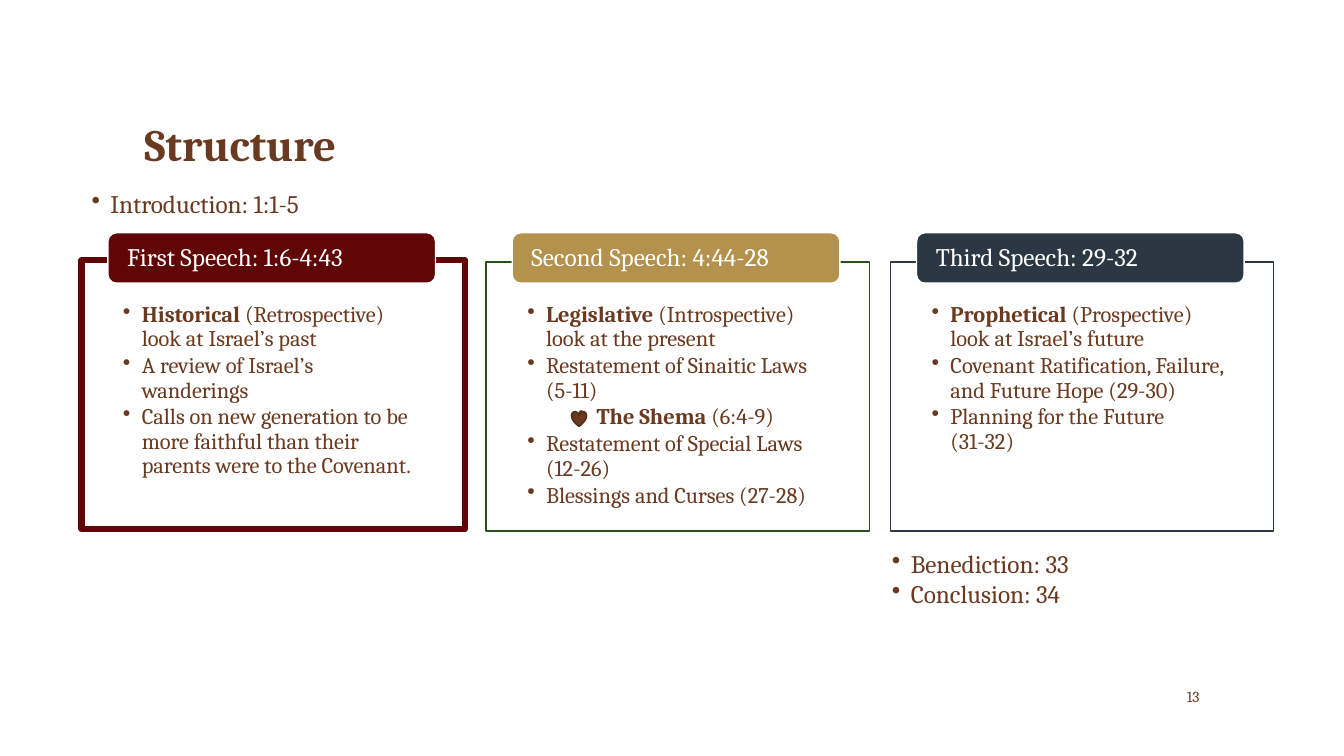
from lxml import etree
from pptx import Presentation
from pptx.dml.color import RGBColor
from pptx.enum.shapes import MSO_SHAPE
from pptx.enum.text import MSO_ANCHOR, MSO_AUTO_SIZE, PP_ALIGN
from pptx.oxml.ns import qn
from pptx.util import Pt

RECTANGLE, ROUNDED, HEART = MSO_SHAPE.RECTANGLE, MSO_SHAPE.ROUNDED_RECTANGLE, MSO_SHAPE.HEART
TOP, MIDDLE, BOTTOM = MSO_ANCHOR.TOP, MSO_ANCHOR.MIDDLE, MSO_ANCHOR.BOTTOM
LEFT, RIGHT = PP_ALIGN.LEFT, PP_ALIGN.RIGHT
FIXED, GROW = MSO_AUTO_SIZE.NONE, MSO_AUTO_SIZE.SHAPE_TO_FIT_TEXT

FONT = "Cambria"
BROWN = RGBColor(0x6A, 0x3A, 0x20)
DARK_BROWN = RGBColor(0x4E, 0x2B, 0x18)
WHITE = RGBColor(0xFF, 0xFF, 0xFF)
MAROON = RGBColor(0x61, 0x06, 0x06)
GOLD = RGBColor(0xB4, 0x91, 0x4C)
GREEN = RGBColor(0x27, 0x52, 0x18)
NAVY = RGBColor(0x2B, 0x37, 0x42)

TITLE = "Structure"
INTRODUCTION = [(1, "", "Introduction: 1:1-5")]
CLOSING = [(1, "", "Benediction: 33"), (1, "", "Conclusion: 34")]
PAGE_NUMBER = "13"
SPEECHES = [
    {"heading": "First Speech: 1:6-4:43", "tab": MAROON, "border": MAROON, "filled": False,
     "points": [
         (1, "Historical", " (Retrospective) look at Israel’s past"),
         (1, "", "A review of Israel’s wanderings"),
         (1, "", "Calls on new generation to be more faithful than their parents "
                 "were to the Covenant.")]},
    {"heading": "Second Speech: 4:44-28", "tab": GOLD, "border": GREEN, "filled": True,
     "points": [
         (1, "Legislative", " (Introspective) look at the present"),
         (1, "", "Restatement of Sinaitic Laws (5-11)"),
         (2, "The Shema ", "(6:4-9)"),
         (1, "", "Restatement of Special Laws (12-26)"),
         (1, "", "Blessings and Curses (27-28)")]},
    {"heading": "Third Speech: 29-32", "tab": NAVY, "border": NAVY, "filled": True,
     "points": [
         (1, "Prophetical", " (Prospective) look at Israel’s future"),
         (1, "", "Covenant Ratification, Failure, and Future Hope (29-30)"),
         (1, "", "Planning for the Future \n(31-32)")]},
]

PANEL_LEFT, PANEL_TOP, PANEL_WIDTH, PANEL_HEIGHT = 58.3, 187.2, 273.8, 192.2
PANEL_PITCH = 288.8
TAB_OFFSET, TAB_TOP, TAB_WIDTH, TAB_HEIGHT = 18.8, 166.3, 234, 36
HIGHLIGHT_RISE = 1.4
HANGING = 13.5
INDENTS = {1: HANGING, 2: 49.5}
PANEL_MARGINS = (29.5, 29.5, 29.5, 10)
TAB_MARGINS = (12, 2, 12, 2)
BOX_MARGINS = (7.2, 3.6, 7.2, 3.6)


def points(values):
    return [Pt(value) for value in values]


def set_frame(shape, margins=BOX_MARGINS, anchor=TOP, auto_size=FIXED):
    frame = shape.text_frame
    left, top, right, bottom = points(margins)
    settings = {"word_wrap": True, "auto_size": auto_size, "vertical_anchor": anchor,
                "margin_left": left, "margin_top": top,
                "margin_right": right, "margin_bottom": bottom}
    for name, value in settings.items():
        setattr(frame, name, value)
    return frame


def set_font(font, size, color, bold=False):
    for name, value in {"name": FONT, "size": Pt(size), "bold": bold}.items():
        setattr(font, name, value)
    font.color.rgb = color


def write_line(frame, text, size, color, bold=False, alignment=LEFT):
    paragraph = frame.paragraphs[0]
    paragraph.alignment = alignment
    paragraph.line_spacing = 0.9
    run = paragraph.add_run()
    run.text = text
    set_font(run.font, size, color, bold)


def write_bullets(frame, items, size):
    for index, (level, lead, rest) in enumerate(items):
        paragraph = frame.add_paragraph() if index else frame.paragraphs[0]
        settings = {"level": level, "alignment": LEFT, "line_spacing": 0.9,
                    "space_after": Pt(2)}
        for name, value in settings.items():
            setattr(paragraph, name, value)
        properties = paragraph._p.get_or_add_pPr()
        properties.set("marL", str(Pt(INDENTS[level])))
        properties.set("indent", str(-Pt(HANGING)))
        etree.SubElement(properties, qn("a:buChar")).set("char", "•")
        for text, bold in ((lead, True), (rest, False)):
            for line_index, line in enumerate(text.split("\n")):
                if line_index:
                    paragraph.add_line_break()
                if line:
                    run = paragraph.add_run()
                    run.text = line
                    set_font(run.font, size, BROWN, bold)


def add_block(slide, kind, place, fill, border, weight=1):
    shape = slide.shapes.add_shape(kind, *points(place))
    shape.shadow.inherit = False
    if fill is None:
        shape.fill.background()
    else:
        shape.fill.solid()
        shape.fill.fore_color.rgb = fill
    shape.line.color.rgb = border
    shape.line.width = Pt(weight)
    return shape


def add_speech(slide, index, speech):
    left = PANEL_LEFT + index * PANEL_PITCH
    panel = add_block(slide, RECTANGLE, (left, PANEL_TOP, PANEL_WIDTH, PANEL_HEIGHT),
                      WHITE if speech["filled"] else None, speech["border"])
    if speech["filled"]:
        color = panel._element.spPr.find(qn("a:solidFill"))[0]
        etree.SubElement(color, qn("a:alpha")).set("val", "90000")
    write_bullets(set_frame(panel, PANEL_MARGINS), speech["points"], 16)
    tab = add_block(slide, ROUNDED, (left + TAB_OFFSET, TAB_TOP, TAB_WIDTH, TAB_HEIGHT),
                    speech["tab"], WHITE)
    write_line(set_frame(tab, TAB_MARGINS, MIDDLE), speech["heading"], 18, WHITE)


def add_list(slide, place, items):
    box = slide.shapes.add_textbox(*points(place))
    write_bullets(set_frame(box, auto_size=GROW), items, 18)


def main():
    presentation = Presentation()
    presentation.slide_width, presentation.slide_height = Pt(960), Pt(540)
    slide = presentation.slides.add_slide(presentation.slide_layouts[5])

    title = slide.shapes.title
    title.left, title.top, title.width, title.height = points((96, 33.8, 768, 92.2))
    write_line(set_frame(title, anchor=BOTTOM), TITLE, 32, BROWN, bold=True)

    add_block(slide, RECTANGLE,
              (PANEL_LEFT, PANEL_TOP - HIGHLIGHT_RISE, PANEL_WIDTH, PANEL_HEIGHT),
              None, MAROON, 4.5)
    for index, speech in enumerate(SPEECHES):
        add_speech(slide, index, speech)

    add_list(slide, (PANEL_LEFT, 133.2, 480, 26.6), INTRODUCTION)
    add_list(slide, (630, 390.2, 279.4, 49.7), CLOSING)
    add_block(slide, HEART, (408.2, 293.8, 10.8, 10.8), BROWN, DARK_BROWN)

    number = slide.shapes.add_textbox(*points((807.8, 486, 56.2, 23.8)))
    write_line(set_frame(number, anchor=MIDDLE), PAGE_NUMBER, 11, BROWN, alignment=RIGHT)

    presentation.save("out.pptx")


if __name__ == "__main__":
    main()
